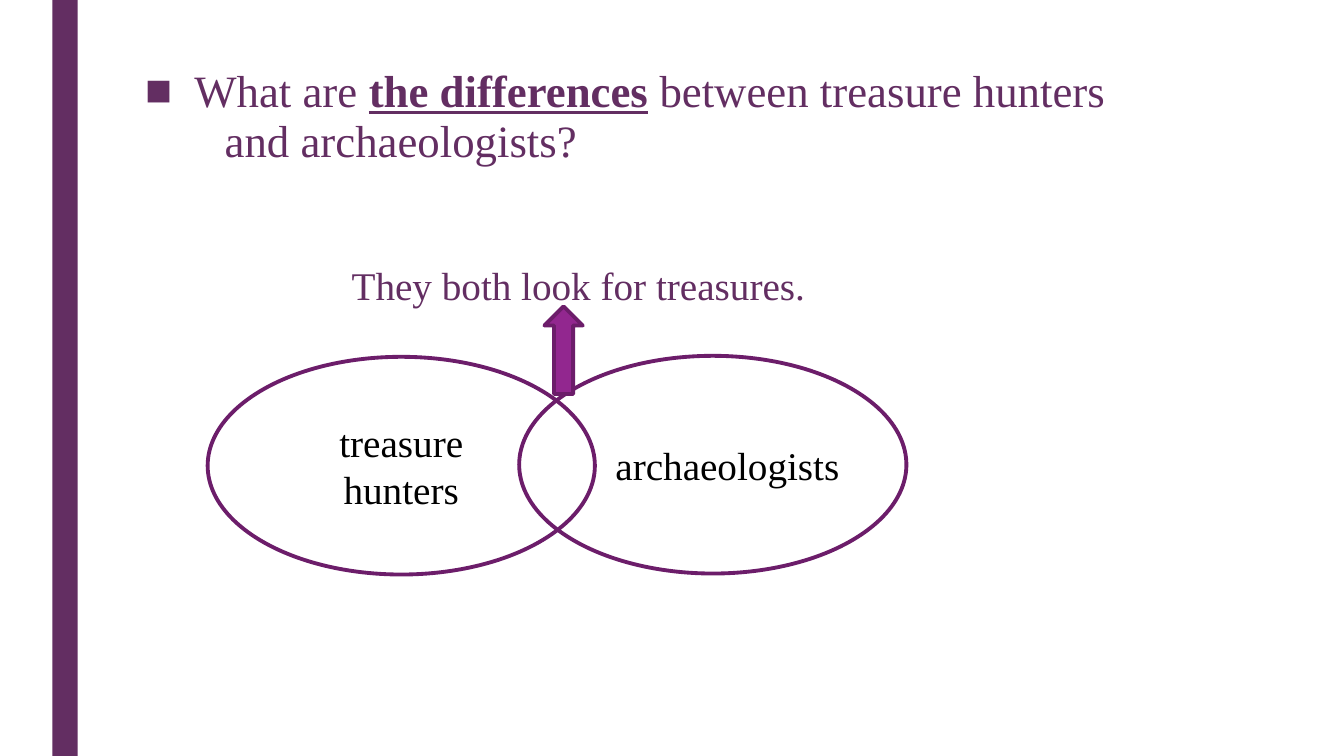
from dataclasses import dataclass

import pptx
import pptx.dml.color
import pptx.enum.shapes
import pptx.enum.text
import pptx.oxml.ns
import pptx.util
from lxml import etree

SHAPE = pptx.enum.shapes.MSO_SHAPE
ALIGN = pptx.enum.text.PP_ALIGN
ANCHOR = pptx.enum.text.MSO_ANCHOR
COLORS = {"plum": "632E62", "outline": "6C1D6A", "arrow": "92278F", "black": "000000"}
FONT = "Times New Roman"
WIDTH, HEIGHT = pptx.util.Inches(13.33), pptx.util.Inches(7.5)


@dataclass
class Box:
    """Place and size in percent of the slide's width and height."""
    left: float
    top: float
    width: float
    height: float

    def emu(self) -> tuple[int, ...]:
        shares = (self.left, self.top, self.width, self.height)
        return tuple(round(share / 100 * full)
                     for share, full in zip(shares, (WIDTH, HEIGHT) * 2))


@dataclass
class VennSet:
    box: Box
    lines: tuple[str, ...]
    left_inset: float
    right_inset: float


BAR = Box(3.9, 0, 1.88, 100)
TITLE = Box(10.05, 8.27, 95.72, 16.8)
BODY = Box(11.25, 33.33, 78.77, 52.27)
ARROW = Box(40.51, 40.53, 2.85, 11.6)
VENN = (
    VennSet(Box(15.45, 47.2, 28.81, 28.8), ("treasure", "hunters"), 0.1, 0.1),
    VennSet(Box(38.63, 47.07, 28.81, 28.8), ("archaeologists",), 0.29, 0),
)


def rgb(name: str) -> pptx.dml.color.RGBColor:
    return pptx.dml.color.RGBColor.from_string(COLORS[name])


def add_shape(s, kind, box: Box, fill: str | None = None, line: str | None = None):
    sp = s.shapes.add_shape(kind, *box.emu())
    sp.shadow.inherit = False
    if fill:
        sp.fill.solid()
        sp.fill.fore_color.rgb = rgb(fill)
    else:
        sp.fill.background()
    if line:
        sp.line.color.rgb = rgb(line)
        sp.line.width = pptx.util.Pt(2.75)
    else:
        sp.line.fill.background()
    return sp


def add_textbox(s, box: Box):
    tf = s.shapes.add_textbox(*box.emu()).text_frame
    tf.word_wrap = True
    return tf


def add_run(p, text: str, *, size: float, color: str = "plum", strong: bool = False) -> None:
    r = p.add_run()
    r.text = text
    r.font.name = FONT
    r.font.size = pptx.util.Pt(size)
    r.font.color.rgb = rgb(color)
    if strong:
        r.font.bold = r.font.underline = True


def set_indent(p, margin: float, bullet: str | None = None) -> None:
    """Indent a paragraph in inches; a bullet hangs at the frame's edge."""
    pPr = p._p.get_or_add_pPr()
    pPr.set("marL", str(pptx.util.Inches(margin)))
    if bullet:
        pPr.set("indent", str(-pptx.util.Inches(margin)))
        etree.SubElement(pPr, pptx.oxml.ns.qn("a:buFont")).set("typeface", FONT)
        etree.SubElement(pPr, pptx.oxml.ns.qn("a:buChar")).set("char", bullet)


def add_question(s) -> None:
    tf = add_textbox(s, TITLE)
    p = tf.paragraphs[0]
    p.line_spacing = 0.93
    set_indent(p, 0.49, "■")
    add_run(p, "What are ", size=32)
    add_run(p, "the differences", size=32, strong=True)
    add_run(p, " between treasure hunters", size=32)
    p = tf.add_paragraph()
    p.line_spacing = 0.93
    set_indent(p, 0.79)
    add_run(p, "and archaeologists?", size=32)


def add_common_trait(s) -> None:
    tf = add_textbox(s, BODY)
    tf.margin_top = pptx.util.Inches(0.13)
    p = tf.paragraphs[0]
    p.line_spacing = 0.94
    set_indent(p, 1.89)
    add_run(p, "They both look for treasures.", size=28)


def add_venn_set(s, venn_set: VennSet) -> None:
    tf = add_shape(s, SHAPE.OVAL, venn_set.box, line="outline").text_frame
    tf.word_wrap = True
    tf.vertical_anchor = ANCHOR.MIDDLE
    tf.margin_left = pptx.util.Inches(venn_set.left_inset)
    tf.margin_right = pptx.util.Inches(venn_set.right_inset)
    for i, line in enumerate(venn_set.lines):
        p = tf.add_paragraph() if i else tf.paragraphs[0]
        p.alignment = ALIGN.CENTER
        add_run(p, line, size=28, color="black")


def main() -> None:
    prs = pptx.Presentation()
    prs.slide_width, prs.slide_height = WIDTH, HEIGHT
    s = prs.slides.add_slide(prs.slide_layouts[6])
    add_shape(s, SHAPE.RECTANGLE, BAR, fill="plum")
    add_question(s)
    add_common_trait(s)
    for venn_set in VENN:
        add_venn_set(s, venn_set)
    add_shape(s, SHAPE.UP_ARROW, ARROW, fill="arrow", line="outline")
    prs.save("out.pptx")


if __name__ == "__main__":
    main()
